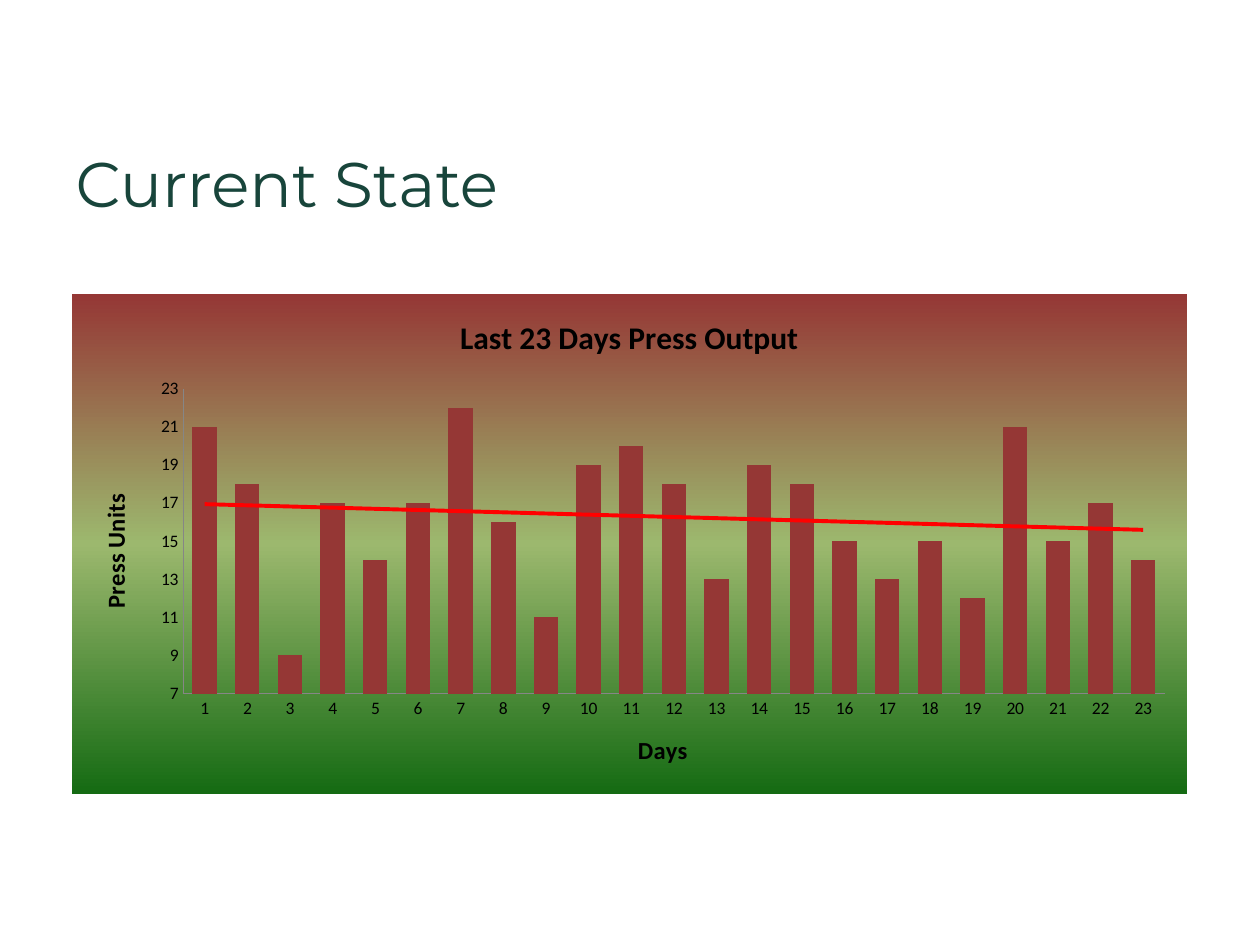
from lxml import etree
from pptx import Presentation
from pptx.chart.data import CategoryChartData
from pptx.dml.color import RGBColor
from pptx.enum.chart import XL_CHART_TYPE, XL_TICK_MARK
from pptx.enum.text import MSO_ANCHOR, PP_ALIGN
from pptx.oxml import parse_xml
from pptx.util import Inches, Pt

COLUMNS = XL_CHART_TYPE.COLUMN_CLUSTERED
NO_TICK = XL_TICK_MARK.NONE
TOP, LEFT = MSO_ANCHOR.TOP, PP_ALIGN.LEFT
NS = ('xmlns:c="http://schemas.openxmlformats.org/drawingml/2006/chart" '
      'xmlns:a="http://schemas.openxmlformats.org/drawingml/2006/main"')

THEME = {
    "heading": {"name": "Montserrat", "size": Pt(36), "bold": False},
    "chart": {"name": "Calibri", "size": Pt(10)},
    "chart_title": {"name": "Calibri", "size": Pt(18), "bold": True},
    "axis_title": {"name": "Calibri", "size": Pt(14), "bold": True},
    "green": "18453B", "black": "000000", "bar": "953735",
    "trend": "FF0000", "axis": "868686",
    "gradient": [(0, "953735"), (50, "9CB86E"), (100, "156B13")],
}
OUTPUT = [21, 18, 9, 17, 14, 17, 22, 16, 11, 19, 20, 18,
          13, 19, 18, 15, 13, 15, 12, 21, 15, 17, 14]


def format_font(font, style, color="black"):
    for name, value in THEME[style].items():
        setattr(font, name, value)
    font.color.rgb = RGBColor.from_string(THEME[color])


def add_title(owner, text, style):
    """Give a chart or an axis a formatted title."""
    tf = (owner.chart_title if hasattr(owner, "chart_title")
          else owner.axis_title).text_frame
    r = tf.paragraphs[0].add_run()
    r.text = text
    format_font(r.font, style)


prs = Presentation()
prs.slide_width, prs.slide_height = Inches(10), Inches(7.5)
s = prs.slides.add_slide(prs.slide_layouts[5])

# Heading
sp = s.shapes.title
sp.left, sp.top, sp.width, sp.height = map(Inches, (0.5, 1.1, 9, 0.96))
tf = sp.text_frame
tf.text = "Current State"
tf.vertical_anchor = TOP
p = tf.paragraphs[0]
p.alignment = LEFT
format_font(p.runs[0].font, "heading", "green")

# Daily output columns
data = CategoryChartData()
data.categories = [str(day) for day in range(1, len(OUTPUT) + 1)]
data.add_series("Series 1", OUTPUT)
chart = s.shapes.add_chart(
    COLUMNS, *map(Inches, (0.57, 2.33, 8.85, 3.97)), data).chart
chart.has_legend = False
format_font(chart.font, "chart")
add_title(chart, "Last 23 Days Press Output", "chart_title")

plot = chart.plots[0]
plot.gap_width = 75
plot.vary_by_categories = False
series = plot.series[0]
series.format.fill.solid()
series.format.fill.fore_color.rgb = RGBColor.from_string(THEME["bar"])

for axis, text in ((chart.category_axis, "Days"),
                   (chart.value_axis, "Press Units ")):
    add_title(axis, text, "axis_title")
    axis.has_major_gridlines = False
    axis.major_tick_mark = axis.minor_tick_mark = NO_TICK
    axis.format.line.color.rgb = RGBColor.from_string(THEME["axis"])
    axis.format.line.width = Pt(0.75)
axis = chart.value_axis
axis.minimum_scale, axis.maximum_scale, axis.major_unit = 7, 23, 2

# Linear trend line
trend = parse_xml(
    f'<c:trendline {NS}><c:spPr><a:ln w="{Pt(2.25)}"><a:solidFill>'
    f'<a:srgbClr val="{THEME["trend"]}"/></a:solidFill></a:ln></c:spPr>'
    '<c:trendlineType val="linear"/><c:dispRSqr val="0"/>'
    '<c:dispEq val="0"/></c:trendline>')
series._element.find("{*}cat").addprevious(trend)

# Plot area as shares of the chart's size
plot_area = chart._chartSpace.chart.plotArea
for old in plot_area.findall("{*}layout"):
    plot_area.remove(old)
modes = "".join(f'<c:{k} val="{v}"/>' for k, v in (
    ("layoutTarget", "inner"), ("xMode", "edge"), ("yMode", "edge"),
    ("x", 0.1), ("y", 0.19), ("w", 0.88), ("h", 0.61)))
plot_area.insert(0, parse_xml(
    f'<c:layout {NS}><c:manualLayout>{modes}</c:manualLayout></c:layout>'))

# Gradient behind the whole chart
fill = parse_xml(
    f'<c:spPr {NS}><a:gradFill><a:gsLst/><a:lin ang="5400000" scaled="0"/>'
    '</a:gradFill><a:ln><a:noFill/></a:ln></c:spPr>')
stops = fill.find(".//{*}gsLst")
for share, color in THEME["gradient"]:
    tag = stops.tag.replace("gsLst", "")
    stop = etree.SubElement(stops, tag + "gs", pos=str(share * 1000))
    etree.SubElement(stop, tag + "srgbClr", val=color)
chart._chartSpace.chart.addnext(fill)

prs.save("out.pptx")
